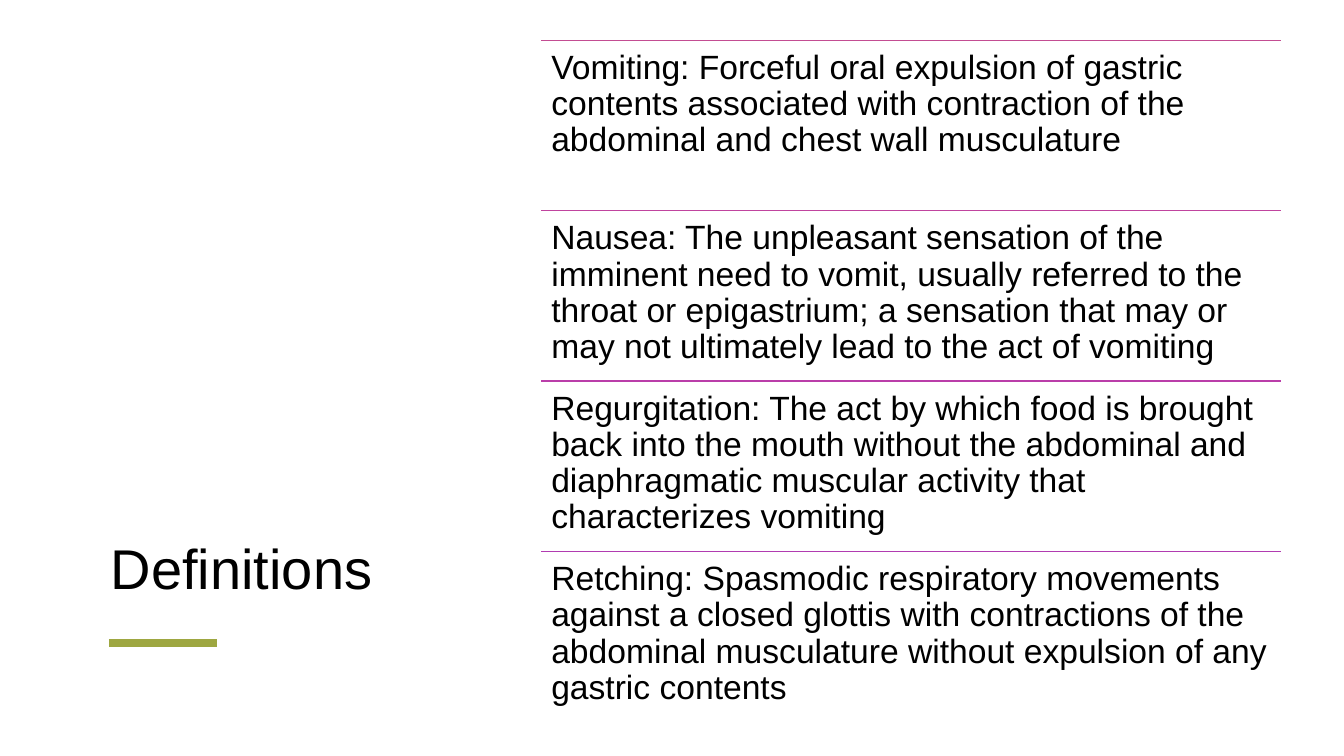
"""Build the Definitions slide: a title beside four ruled definitions."""
from pptx import Presentation
from pptx.dml.color import RGBColor
from pptx.enum import shapes, text
from pptx.oxml.ns import qn
from pptx.util import Pt
from lxml import etree

PX = 9144
SLIDE = (1333, 750)
TITLE = ("Definitions", (100, 100, 388, 501))
ACCENT = ((108, 638), (215, 638), "9EA741", 6)
LEFT, TOP, WIDTH, ROW = 537, 40, 734, 169
DEFINITIONS = [
    ("C34D92", "Vomiting: Forceful oral expulsion of gastric contents associated "
               "with contraction of the abdominal and chest wall musculature"),
    ("C0449E", "Nausea: The unpleasant sensation of the imminent need to vomit, "
               "usually referred to the throat or epigastrium; a sensation that "
               "may or may not ultimately lead to the act of vomiting"),
    ("BA3EA9", "Regurgitation: The act by which food is brought back into the mouth "
               "without the abdominal and diaphragmatic muscular activity that "
               "characterizes vomiting"),
    ("B13BB1", "Retching: Spasmodic respiratory movements against a closed glottis "
               "with contractions of the abdominal musculature without expulsion "
               "of any gastric contents"),
]


def px(*values):
    return [v * PX for v in values]


def rgb(value):
    return RGBColor.from_string(value)


def write(sp, words, size, anchor, spacing=1.0, inset=10, color="000000"):
    tf = sp.text_frame
    tf.word_wrap = True
    tf.auto_size = text.MSO_AUTO_SIZE.NONE
    tf.vertical_anchor = anchor
    tf.margin_left, tf.margin_right = px(10, 10)
    tf.margin_top, tf.margin_bottom = px(inset, inset)
    p = tf.paragraphs[0]
    p.alignment = text.PP_ALIGN.LEFT
    p.line_spacing = spacing
    r = p.add_run()
    r.text = words
    r.font.size = Pt(size)
    r.font.name = "Arial"
    r.font.color.rgb = rgb(color)


def rule(s, start, end, color, width):
    line = s.shapes.add_connector(shapes.MSO_CONNECTOR.STRAIGHT,
                                  *px(*start, *end))
    line.line.color.rgb = rgb(color)
    line.line.width = Pt(width)
    etree.SubElement(line._element.spPr, qn("a:effectLst"))


def main():
    prs = Presentation()
    prs.slide_width, prs.slide_height = px(*SLIDE)
    s = prs.slides.add_slide(prs.slide_layouts[5])

    words, box = TITLE
    title = s.shapes.title
    title.left, title.top, title.width, title.height = px(*box)
    write(title, words, 40, text.MSO_ANCHOR.BOTTOM, inset=5)
    rule(s, *ACCENT)

    for i, (color, words) in enumerate(DEFINITIONS):
        top = TOP + i * ROW
        rule(s, (LEFT, top), (LEFT + WIDTH, top), color, 1)
        sp = s.shapes.add_textbox(*px(LEFT, top, WIDTH, ROW))
        write(sp, words, 24, text.MSO_ANCHOR.TOP, spacing=0.9)

    prs.save("out.pptx")


if __name__ == "__main__":
    main()
